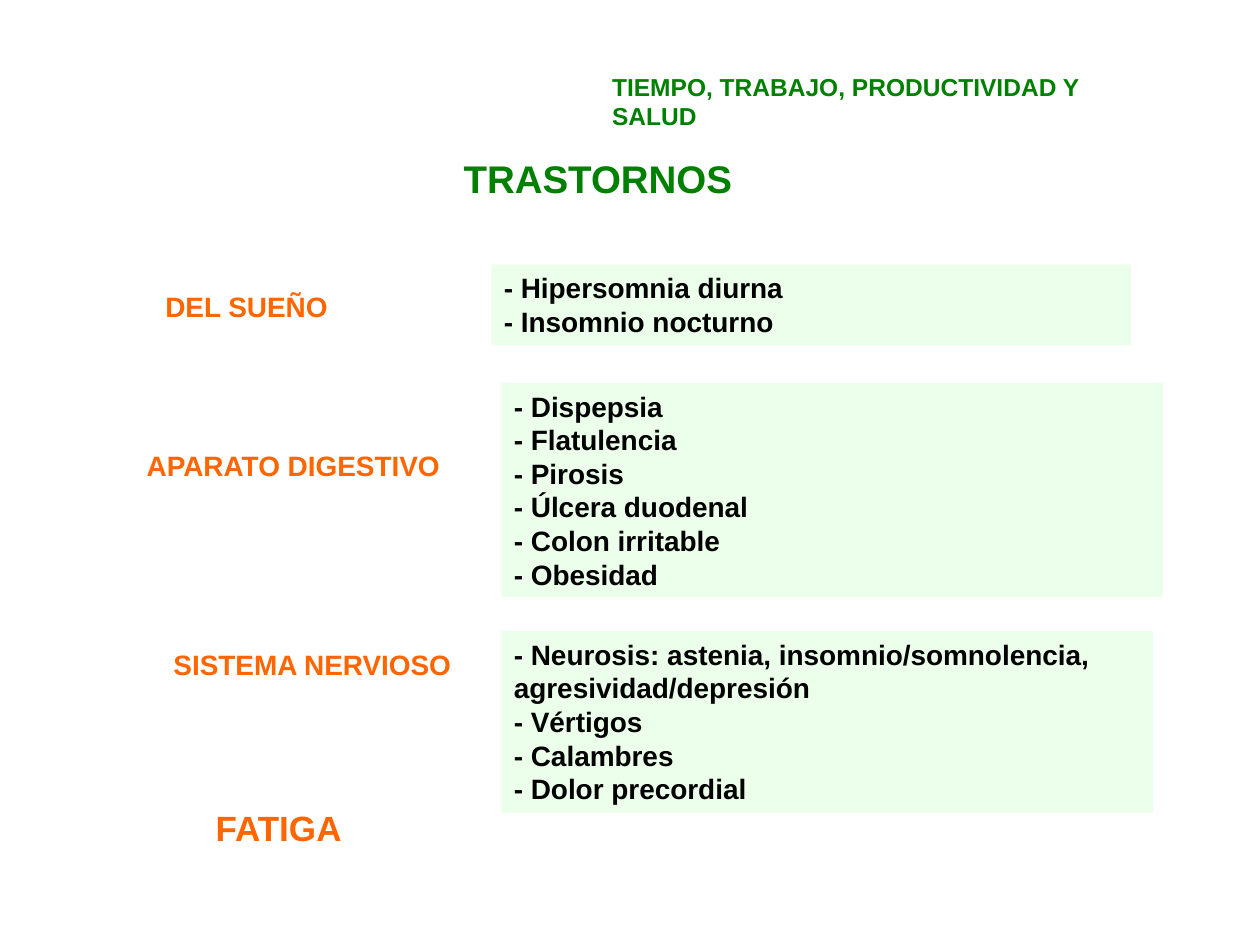
from pptx import Presentation
from pptx.dml.color import RGBColor as Color
from pptx.enum.shapes import MSO_SHAPE as Shape
from pptx.enum.text import MSO_ANCHOR as Anchor, MSO_AUTO_SIZE as AutoSize, PP_ALIGN as Align
from pptx.util import Inches, Pt

THEME = {
    "font": "Arial",
    "green": Color(0x00, 0x80, 0x00),
    "orange": Color(0xFF, 0x66, 0x00),
    "black": Color(0x00, 0x00, 0x00),
    "mint": Color(0xEB, 0xFF, 0xEB),
    "header": Pt(14),
    "body": Pt(16),
    "fatigue": Pt(20),
    "title": Pt(22),
}

deck = Presentation()
deck.slide_width, deck.slide_height = Inches(10), Inches(7.5)
page = deck.slides.add_slide(deck.slide_layouts[5])
column, row = deck.slide_width / 100, deck.slide_height / 75


def grid(left, top, width, height):
    return [round(left * column), round(top * row), round(width * column), round(height * row)]


def write(box, lines, size, color, align=Align.LEFT, anchor=Anchor.TOP):
    frame = box.text_frame
    settings = {"word_wrap": True, "auto_size": AutoSize.NONE, "vertical_anchor": anchor}
    for name, value in settings.items():
        setattr(frame, name, value)
    font = {"name": THEME["font"], "size": THEME[size], "bold": True}
    for index, line in enumerate(lines):
        para = frame.add_paragraph() if index else frame.paragraphs[0]
        para.alignment = align
        span = para.add_run()
        span.text = line
        for name, value in font.items():
            setattr(span.font, name, value)
        span.font.color.rgb = THEME[color]


title = page.shapes.title
title.left, title.top, title.width, title.height = grid(35.8, 11.8, 24, 4.7)
write(title, ["TRASTORNOS"], "title", "green")

header = page.shapes.add_textbox(*grid(47.6, 5.2, 46, 5.7))
write(header, ["TIEMPO, TRABAJO, PRODUCTIVIDAD Y SALUD"], "header", "green")

labels = [
    ("DEL SUEÑO", "body", (9, 22.5, 18, 3.7)),
    ("APARATO DIGESTIVO", "body", (5.1, 35.1, 30.8, 3.7)),
    ("SISTEMA NERVIOSO", "body", (4.3, 50.9, 32.5, 3.7)),
    ("FATIGA", "fatigue", (4.3, 63.5, 23.8, 4.3)),
]
for label, size, place in labels:
    box = page.shapes.add_textbox(*grid(*place))
    write(box, [label], size, "orange", Align.RIGHT)

panels = [
    ((39, 21, 50.8, 6.4), ["Hipersomnia diurna", "Insomnio nocturno"]),
    (
        (39.8, 30.4, 52.5, 17),
        ["Dispepsia", "Flatulencia", "Pirosis", "Úlcera duodenal", "Colon irritable", "Obesidad"],
    ),
    (
        (39.8, 50.1, 51.7, 14.4),
        [
            "Neurosis: astenia, insomnio/somnolencia, agresividad/depresión",
            "Vértigos",
            "Calambres",
            "Dolor precordial",
        ],
    ),
]
for place, symptoms in panels:
    panel = page.shapes.add_shape(Shape.RECTANGLE, *grid(*place))
    panel.shadow.inherit = False
    panel.fill.solid()
    panel.fill.fore_color.rgb = THEME["mint"]
    panel.line.fill.background()
    write(panel, [f"- {symptom}" for symptom in symptoms], "body", "black")

deck.save("out.pptx")
